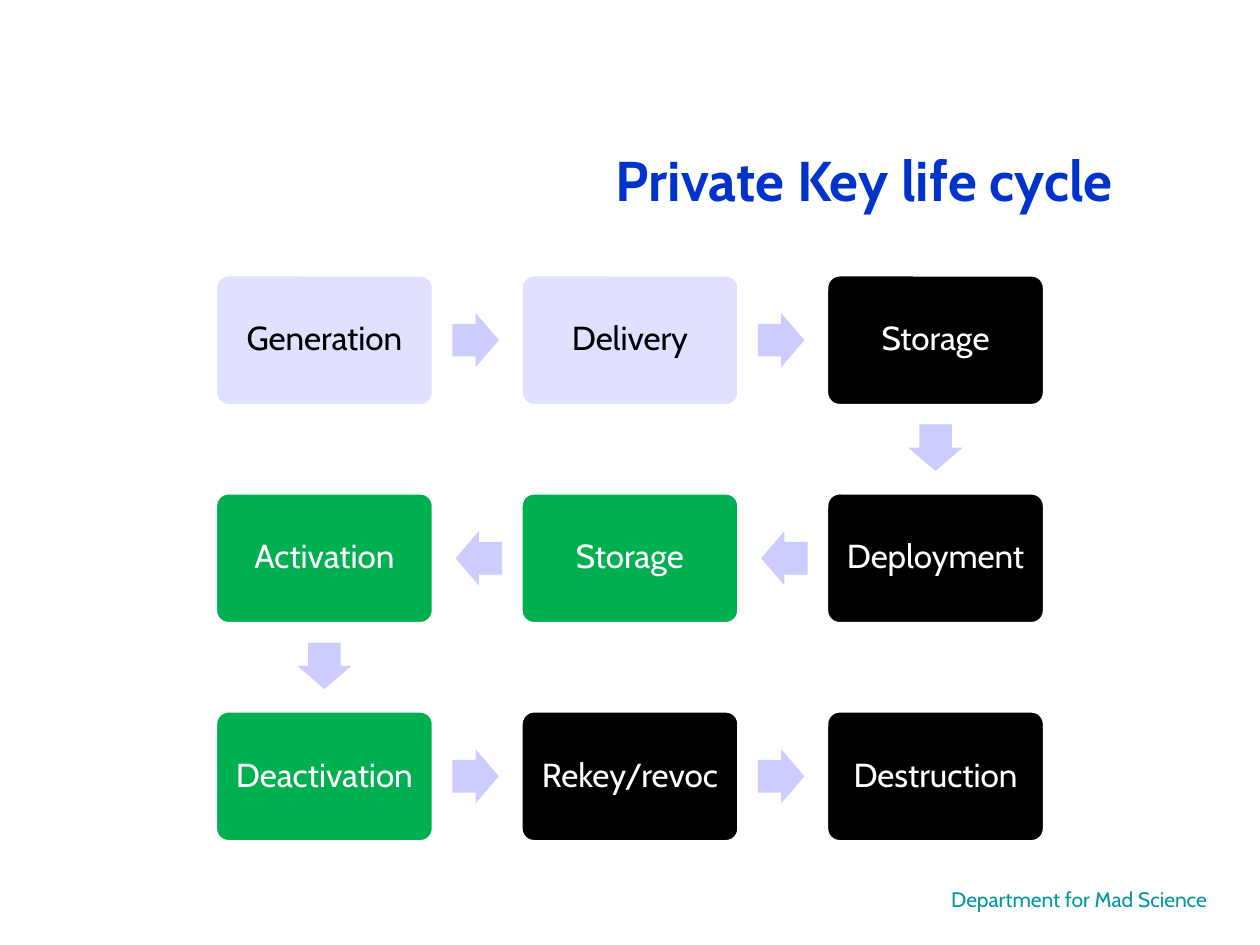
from dataclasses import dataclass
from itertools import pairwise

from pptx import Presentation
from pptx.dml.color import RGBColor
from pptx.enum.shapes import MSO_SHAPE as Shape
from pptx.enum.text import MSO_ANCHOR as Anchor, PP_ALIGN as Align
from pptx.util import Pt


@dataclass(frozen=True)
class Theme:
    """Hold the colours, font and type sizes of the slide."""
    font: str = "Cabin"
    title: str = "0033CC"
    footer: str = "009999"
    arrow: str = "CCCCFF"
    pale: str = "E0E0FF"
    green: str = "00B050"
    black: str = "000000"
    white: str = "FFFFFF"
    title_size: int = 32
    step_size: int = 19
    footer_size: int = 12


@dataclass(frozen=True)
class Box:
    """Hold a rectangle in points."""
    left: float
    top: float
    width: float
    height: float

    @property
    def center(self):
        """Return the middle of the rectangle."""
        return self.left + self.width / 2, self.top + self.height / 2

    def lengths(self):
        """Return left, top, width and height as lengths."""
        return Pt(self.left), Pt(self.top), Pt(self.width), Pt(self.height)


THEME = Theme()
STEPS = [
    ("Generation", THEME.pale, THEME.black),
    ("Delivery", THEME.pale, THEME.black),
    ("Storage", THEME.black, THEME.white),
    ("Deployment", THEME.black, THEME.white),
    ("Storage", THEME.green, THEME.white),
    ("Activation", THEME.green, THEME.white),
    ("Deactivation", THEME.green, THEME.white),
    ("Rekey/revoc", THEME.black, THEME.white),
    ("Destruction", THEME.black, THEME.white),
]
COLUMNS, ROWS = 3, 3
STEP_WIDTH, STEP_HEIGHT = 124.6, 74.8
ARROW_LENGTH, ARROW_BREADTH, ARROW_GAP = 26.6, 31, 10.8


def write(shape, text, size, color, bold=False):
    """Write one centred run in the middle of a shape."""
    frame = shape.text_frame
    frame.word_wrap = True
    frame.vertical_anchor = Anchor.MIDDLE
    paragraph = frame.paragraphs[0]
    paragraph.alignment = Align.CENTER
    run = paragraph.add_run()
    run.text = text
    run.font.name = THEME.font
    run.font.size = Pt(size)
    run.font.bold = bold
    run.font.color.rgb = RGBColor.from_string(color)
    return paragraph


def add_filled(slide, kind, box, color):
    """Add a preset shape with a flat fill and no shadow."""
    shape = slide.shapes.add_shape(kind, *box.lengths())
    shape.shadow.inherit = False
    shape.fill.solid()
    shape.fill.fore_color.rgb = RGBColor.from_string(color)
    return shape


def add_step(slide, box, text, fill, color):
    """Add one rounded step of the cycle."""
    step = add_filled(slide, Shape.ROUNDED_RECTANGLE, box, fill)
    step.adjustments[0] = 0.1
    step.line.color.rgb = RGBColor.from_string(THEME.white)
    step.line.width = Pt(2)
    frame = step.text_frame
    frame.margin_left = frame.margin_right = Pt(6)
    frame.margin_top = frame.margin_bottom = Pt(6)
    write(step, text, THEME.step_size, color).line_spacing = 0.9


def add_arrow(slide, source, target):
    """Add a block arrow that leaves the source towards the target."""
    x, y = source.center
    reach = ARROW_GAP + ARROW_LENGTH / 2
    if source.top != target.top:
        y += source.height / 2 + reach
        rotation = 90
    elif target.left > source.left:
        x += source.width / 2 + reach
        rotation = 0
    else:
        x -= source.width / 2 + reach
        rotation = 180
    box = Box(x - ARROW_LENGTH / 2, y - ARROW_BREADTH / 2, ARROW_LENGTH, ARROW_BREADTH)
    arrow = add_filled(slide, Shape.RIGHT_ARROW, box, THEME.arrow)
    arrow.adjustments[0] = 0.6
    arrow.adjustments[1] = 0.5
    arrow.line.fill.background()
    arrow.rotation = rotation


def add_cycle(slide, region):
    """Lay the steps in a snaking grid and join them with arrows."""
    pitch_x = (region.width - STEP_WIDTH) / (COLUMNS - 1)
    pitch_y = (region.height - STEP_HEIGHT) / (ROWS - 1)
    boxes = []
    for index, step in enumerate(STEPS):
        row, column = divmod(index, COLUMNS)
        if row % 2:
            column = COLUMNS - 1 - column
        box = Box(region.left + column * pitch_x, region.top + row * pitch_y,
                  STEP_WIDTH, STEP_HEIGHT)
        add_step(slide, box, *step)
        boxes.append(box)
    for source, target in pairwise(boxes):
        add_arrow(slide, source, target)


def add_title(slide, box, text):
    """Place and format the title placeholder."""
    title = slide.shapes.title
    title.left, title.top, title.width, title.height = box.lengths()
    write(title, text, THEME.title_size, THEME.title, bold=True)


def add_footer(slide, box, text):
    """Add the department line."""
    footer = slide.shapes.add_textbox(*box.lengths())
    write(footer, text, THEME.footer_size, THEME.footer)


def main():
    """Build and save the slide."""
    presentation = Presentation()
    presentation.slide_width, presentation.slide_height = Pt(720), Pt(540)
    slide = presentation.slides.add_slide(presentation.slide_layouts[5])
    add_footer(slide, Box(513.4, 503.3, 206.6, 21.6), "Department for Mad Science")
    add_title(slide, Box(280.8, 60.5, 426.2, 84.2), "Private Key life cycle")
    add_cycle(slide, Box(123.1, 157, 473.8, 324))
    presentation.save("out.pptx")


if __name__ == "__main__":
    main()
